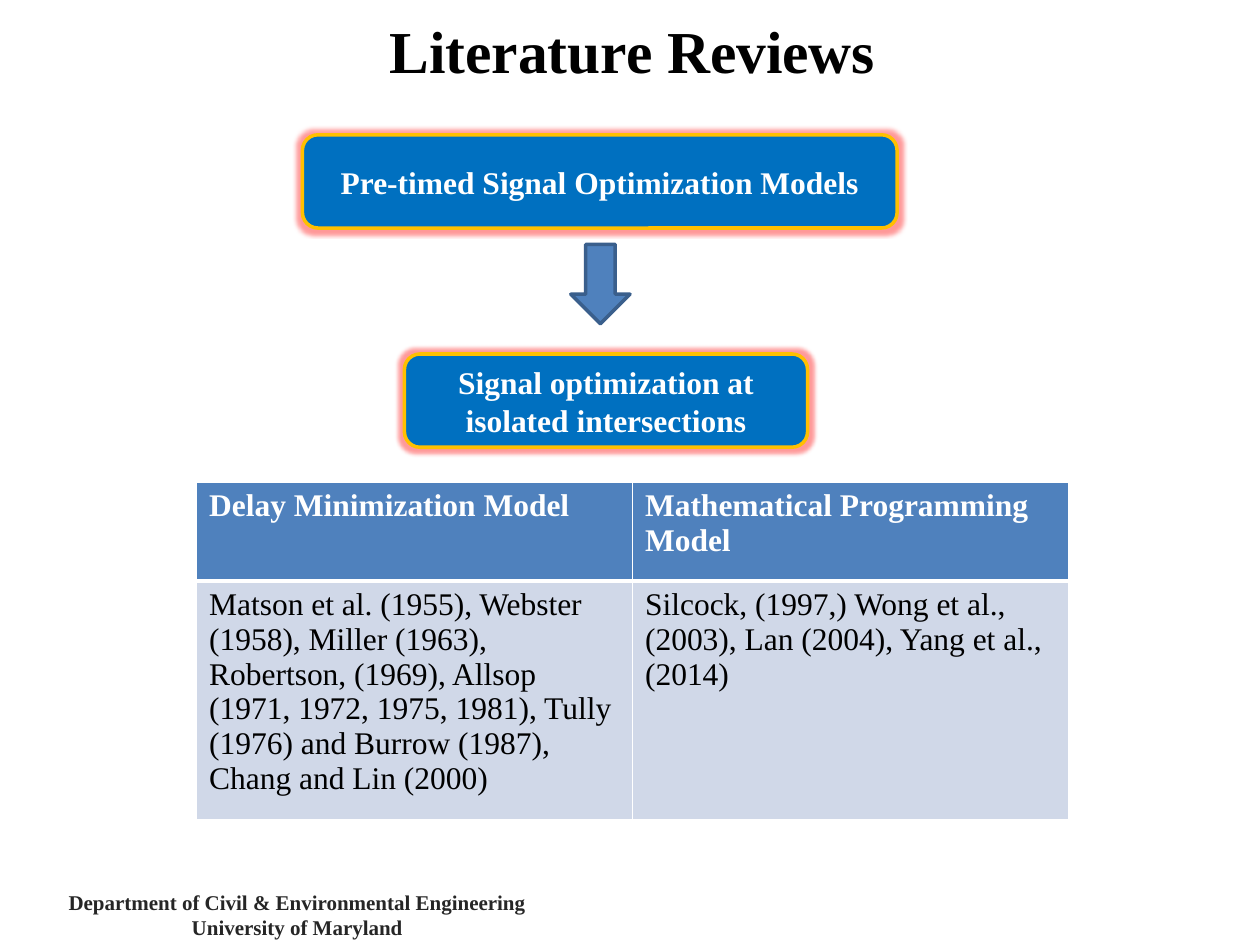
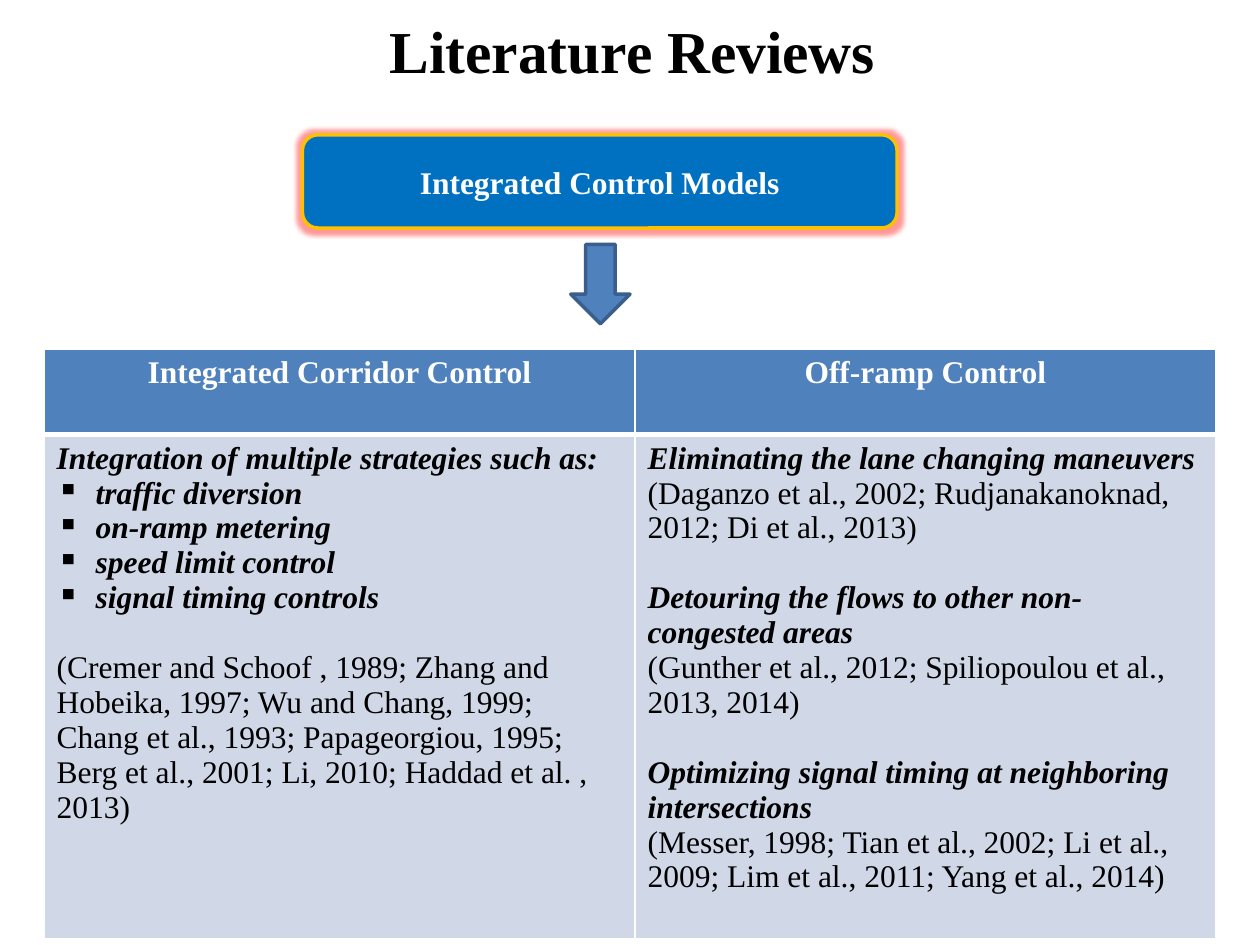
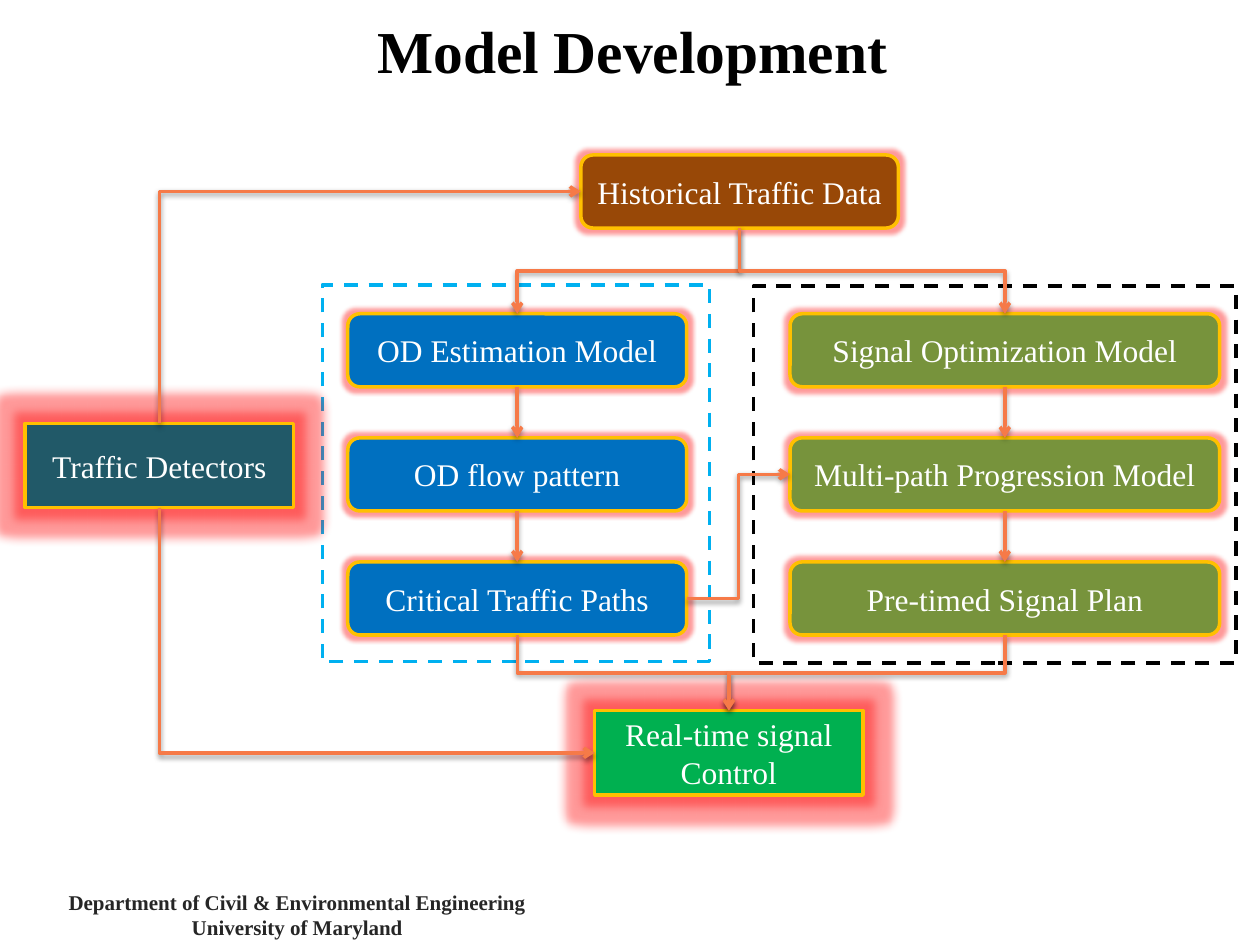
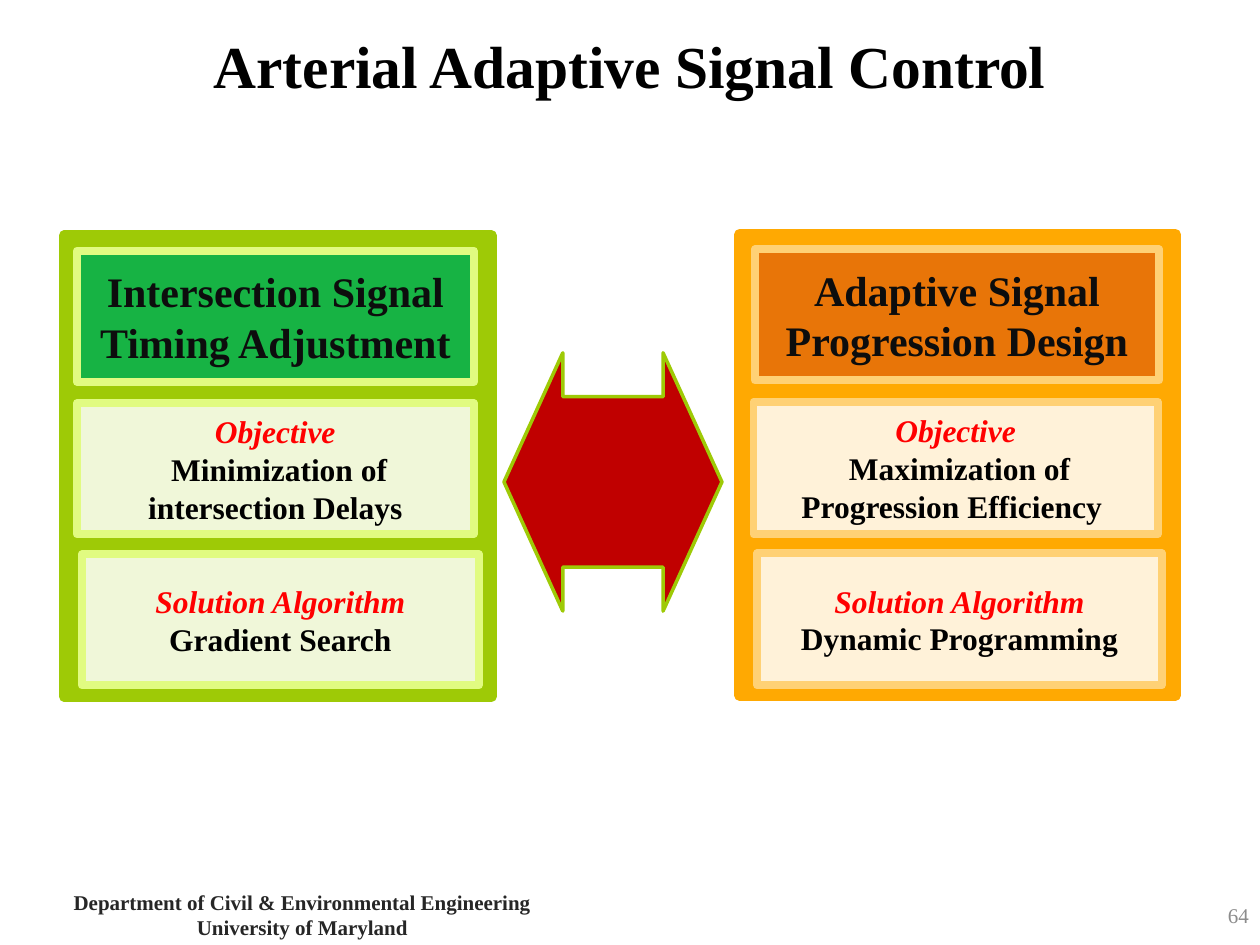
from dataclasses import dataclass, replace
from typing import Any, Optional

import lxml.etree
import pptx
import pptx.dml.color
import pptx.enum.dml
import pptx.enum.shapes
import pptx.enum.text
import pptx.oxml.ns
import pptx.util

Inches = pptx.util.Inches
Pt = pptx.util.Pt
RGB = pptx.dml.color.RGBColor
Kind = pptx.enum.shapes.MSO_SHAPE
Wire = pptx.enum.shapes.MSO_CONNECTOR
Align = pptx.enum.text.PP_ALIGN
Anchor = pptx.enum.text.MSO_ANCHOR
qn = pptx.oxml.ns.qn

FONT = "Times New Roman"
BLACK = RGB(0x00, 0x00, 0x00)
WHITE = RGB(0xFF, 0xFF, 0xFF)
RED = RGB(0xFF, 0x00, 0x00)
INK = RGB(0x0D, 0x0D, 0x0D)
DARK = RGB(0x26, 0x26, 0x26)
GRAY = RGB(0x8C, 0x8C, 0x8C)
BLUE = RGB(0x00, 0x70, 0xC0)
SKY = RGB(0x00, 0xB0, 0xF0)
STEEL = RGB(0x4F, 0x81, 0xBD)
NAVY = RGB(0x3A, 0x5F, 0x8C)
PALE = RGB(0xD0, 0xD8, 0xE8)
GOLD = RGB(0xFF, 0xC0, 0x00)
TEAL = RGB(0x21, 0x59, 0x68)
BROWN = RGB(0x98, 0x48, 0x07)
OLIVE = RGB(0x77, 0x93, 0x3C)
GREEN = RGB(0x00, 0xB0, 0x50)
CORAL = RGB(0xF6, 0x7A, 0x48)
LIME = RGB(0x9E, 0xCA, 0x06)
LEMON = RGB(0xE1, 0xFB, 0x81)
AMBER = RGB(0xFF, 0xA9, 0x02)
SAND = RGB(0xFF, 0xD1, 0x75)
RUST = RGB(0xE4, 0x6C, 0x0A)
WINE = RGB(0xC0, 0x00, 0x00)


@dataclass(frozen=True)
class Para:
    text: str
    size: float = 18
    color: RGB = BLACK
    bold: bool = False
    italic: bool = False
    align: Any = Align.LEFT
    bullet: bool = False
    gap: float = 0


@dataclass(frozen=True)
class Rect:
    left: float
    top: float
    width: float
    height: float

    def frame(self) -> list[int]:
        return [Inches(v) for v in (self.left, self.top, self.width, self.height)]


@dataclass(frozen=True)
class Node:
    text: str
    rect: Rect
    fill: RGB
    bold: bool = False
    kind: Any = Kind.ROUNDED_RECTANGLE
    glow: float = 5


@dataclass(frozen=True)
class Panel:
    rect: Rect
    fill: RGB
    edge: RGB
    head: RGB
    title: str
    goal: str
    method: str
    cards: tuple[Rect, ...]


def sub(parent: Any, tag: str, **attrs: Any) -> Any:
    """Append a child element with the given attributes."""
    return lxml.etree.SubElement(
        parent, qn(tag), {k: str(v) for k, v in attrs.items()})


def tint(parent: Any, color: RGB, alpha: int) -> None:
    """Add a colour with its opacity in percent."""
    sub(sub(parent, "a:srgbClr", val=color), "a:alpha", val=alpha * 1000)


def write(frame: Any, paras: list[Para]) -> None:
    """Fill a text frame with formatted paragraphs."""
    frame.word_wrap = True
    for i, item in enumerate(paras):
        para = frame.paragraphs[0] if i == 0 else frame.add_paragraph()
        para.text = item.text
        para.alignment = item.align
        if item.gap:
            para.space_before = Pt(item.gap)
        if item.bullet:
            props = para._p.get_or_add_pPr()
            props.set("marL", str(Inches(0.31)))
            props.set("indent", str(-Inches(0.31)))
            sub(props, "a:buChar", char="▪")
        font = para.font
        font.name, font.size = FONT, Pt(item.size)
        font.bold, font.italic = item.bold, item.italic
        font.color.rgb = item.color


def add_slide(deck: Any, title: str, rect: Rect = Rect(0.04, 0.06, 9.96, 0.67),
              anchor: Any = Anchor.TOP) -> Any:
    slide = deck.slides.add_slide(deck.slide_layouts[5])
    head = slide.shapes.title
    head.left, head.top, head.width, head.height = rect.frame()
    write(head.text_frame, [Para(title, 34, bold=True, align=Align.CENTER)])
    head.text_frame.vertical_anchor = anchor
    return slide


def add_text(slide: Any, rect: Rect, paras: list[Para]) -> None:
    box = slide.shapes.add_textbox(*rect.frame())
    write(box.text_frame, paras)
    box.text_frame.vertical_anchor = Anchor.MIDDLE


def add_footer(slide: Any, width: float = 3.86) -> None:
    base = Para("", 12, DARK, True, align=Align.CENTER)
    lines = ("Department of Civil & Environmental Engineering",
             "University of Maryland")
    add_text(slide, Rect(0.43, 7.06, width, 0.4),
             [replace(base, text=line) for line in lines])


def add_block(shapes: Any, kind: Any, rect: Rect, fill: Optional[RGB],
              edge: RGB, weight: float = 2, alpha: int = 100) -> Any:
    """Draw a preset shape; no fill when fill is None."""
    shape = shapes.add_shape(kind, *rect.frame())
    shape.shadow.inherit = False
    shape.line.color.rgb = edge
    shape.line.width = Pt(weight)
    if fill is None:
        shape.fill.background()
    else:
        shape.fill.solid()
        shape.fill.fore_color.rgb = fill
        if alpha < 100:
            color = shape._element.spPr.find(qn("a:solidFill"))[0]
            sub(color, "a:alpha", val=alpha * 1000)
    return shape


def add_node(slide: Any, node: Node) -> Any:
    """Draw a glowing labelled box."""
    shape = add_block(slide.shapes, node.kind, node.rect, node.fill, GOLD)
    effects = shape._element.spPr.find(qn("a:effectLst"))
    tint(sub(effects, "a:glow", rad=Pt(node.glow)), RED, 40)
    write(shape.text_frame,
          [Para(node.text, color=WHITE, bold=node.bold, align=Align.CENTER)])
    return shape


def add_dash(slide: Any, rect: Rect, edge: RGB) -> None:
    frame = add_block(slide.shapes, Kind.RECTANGLE, rect, None, edge)
    frame.line.dash_style = pptx.enum.dml.MSO_LINE.DASH


def add_arrow(slide: Any) -> None:
    """Draw the block arrow that points down from the top box."""
    arrow = add_block(slide.shapes, Kind.RIGHT_ARROW,
                      Rect(4.45, 2.02, 0.63, 0.47), STEEL, NAVY)
    arrow.rotation = 90


def add_table(slide: Any, rect: Rect, cols: list[float], rows: list[float],
              cells: list[list[list[Para]]]) -> None:
    table = slide.shapes.add_table(len(rows), len(cols), *rect.frame()).table
    for col, width in zip(table.columns, cols):
        col.width = Inches(width)
    for r, (row, height) in enumerate(zip(table.rows, rows)):
        row.height = Inches(height)
        for c, paras in enumerate(cells[r]):
            cell = table.cell(r, c)
            props = cell._tc.get_or_add_tcPr()
            for side in "LRTB":
                thick = (r, side) in ((0, "B"), (1, "T"))
                line = sub(props, f"a:ln{side}", w=Pt(3 if thick else 1))
                sub(sub(line, "a:solidFill"), "a:srgbClr", val=WHITE)
            cell.fill.solid()
            cell.fill.fore_color.rgb = PALE if r else STEEL
            write(cell.text_frame, paras)


def side(shape: Any, spot: int) -> tuple[int, int]:
    """Middle of a side: 0 top, 1 left, 2 bottom, 3 right."""
    x = shape.left + (shape.width // 2, 0, shape.width // 2, shape.width)[spot]
    y = shape.top + (0, shape.height // 2, shape.height, shape.height // 2)[spot]
    return x, y


def style(wire: Any) -> None:
    """Give a connector its colour, arrowhead and soft shadow."""
    wire.line.color.rgb = CORAL
    wire.line.width = Pt(2)
    props = wire._element.spPr
    sub(props.find(qn("a:ln")), "a:tailEnd", type="arrow")
    shade = sub(sub(props, "a:effectLst"), "a:outerShdw", blurRad=Pt(3.1),
                dist=Pt(1.6), dir=90 * 60000, rotWithShape=0)
    tint(shade, BLACK, 38)


def add_link(slide: Any, start: Any, end: Any) -> None:
    """Join the bottom of one box to the top of the next."""
    wire = slide.shapes.add_connector(Wire.STRAIGHT, *side(start, 2), *side(end, 0))
    wire.begin_connect(start, 2)
    wire.end_connect(end, 0)
    style(wire)


def add_elbow(slide: Any, start: tuple[int, int], end: tuple[int, int],
              bends: int = 2) -> None:
    """Draw an elbow that leaves its start vertically."""
    (x1, y1), (x2, y2) = start, end
    midx, midy = (x1 + x2) // 2, (y1 + y2) // 2
    turn = 270 if x2 > x1 and y2 > y1 else 90
    sign = 1 if turn == 90 else -1
    dx, dy = sign * (y2 - y1) // 2, sign * (x2 - x1) // 2
    wire = slide.shapes.add_connector(
        Wire.ELBOW, midx - dx, midy + dy, midx + dx, midy - dy)
    props = wire._element.spPr
    props.find(qn("a:xfrm")).set("rot", str(turn * 60000))
    props.find(qn("a:prstGeom")).set("prst", f"bentConnector{bends + 1}")
    style(wire)


def add_panel(slide: Any, panel: Panel) -> None:
    """Draw a grouped panel with a heading and two cards."""
    shapes = slide.shapes.add_group_shape().shapes
    add_block(shapes, Kind.RECTANGLE, panel.rect, panel.fill, panel.fill, 6)
    key = Para("", color=RED, bold=True, italic=True, align=Align.CENTER)
    body = replace(key, color=BLACK, italic=False)
    texts = (
        [replace(body, text=panel.title, size=24, color=INK)],
        [replace(key, text="Objective"), replace(body, text=panel.goal)],
        [replace(key, text="Solution Algorithm"), replace(body, text=panel.method)],
    )
    for rect, fill, paras in zip(panel.cards, (panel.head, WHITE, WHITE), texts):
        card = add_block(shapes, Kind.RECTANGLE, rect, fill, panel.edge, 4.5, 85)
        write(card.text_frame, paras)


TOP = Rect(2.4, 1.07, 4.72, 0.74)
HEAD = Para("", color=WHITE, bold=True)
NOTE = Para("", bold=True, italic=True)


def draw_timed(deck: Any) -> None:
    slide = add_slide(deck, "Literature Reviews")
    add_node(slide, Node("Pre-timed Signal Optimization Models", TOP, BLUE, True))
    add_arrow(slide)
    add_node(slide, Node("Signal optimization at isolated intersections",
                         Rect(3.21, 2.81, 3.2, 0.74), BLUE, True))
    add_table(slide, Rect(1.56, 3.83, 6.92, 2.68), [3.46, 3.46], [0.78, 1.9], [
        [[replace(HEAD, text="Delay Minimization Model")],
         [replace(HEAD, text="Mathematical Programming Model")]],
        [[Para("Matson et al. (1955), Webster (1958), Miller (1963), Robertson, "
               "(1969), Allsop (1971, 1972, 1975, 1981), Tully (1976) and Burrow "
               "(1987), Chang and Lin (2000)")],
         [Para("Silcock, (1997,) Wong et al., (2003), Lan (2004), "
               "Yang et al., (2014)")]],
    ])
    add_footer(slide)


def draw_joint(deck: Any) -> None:
    slide = add_slide(deck, "Literature Reviews")
    add_node(slide, Node("Integrated Control Models", TOP, BLUE, True))
    add_arrow(slide)
    head = replace(HEAD, align=Align.CENTER)
    plans = ("traffic diversion", "on-ramp metering", "speed limit control",
             "signal timing controls")
    left = [replace(NOTE, text="Integration of multiple strategies such as:")]
    left += [replace(NOTE, text=plan, bullet=True) for plan in plans]
    left.append(Para(
        "(Cremer and Schoof , 1989; Zhang and Hobeika, 1997; Wu and Chang, 1999; "
        "Chang et al., 1993; Papageorgiou, 1995; Berg et al., 2001; Li, 2010; "
        "Haddad et al. , 2013)", gap=20))
    works = (
        ("Eliminating the lane changing maneuvers",
         "(Daganzo et al., 2002; Rudjanakanoknad, 2012; Di et al., 2013)"),
        ("Detouring the flows to other non-congested areas",
         "(Gunther et al., 2012; Spiliopoulou et al., 2013, 2014)"),
        ("Optimizing signal timing at neighboring intersections",
         "(Messer, 1998; Tian et al., 2002; Li et al., 2009; Lim et al., 2011; "
         "Yang et al., 2014)"),
    )
    right = []
    for topic, cites in works:
        right += [replace(NOTE, text=topic, gap=20 if right else 0), Para(cites)]
    add_table(slide, Rect(0.35, 2.77, 9.3, 4.68), [4.69, 4.61], [0.68, 4], [
        [[replace(head, text="Integrated Corridor Control")],
         [replace(head, text="Off-ramp Control")]],
        [left, right],
    ])


def draw_model(deck: Any) -> None:
    slide = add_slide(deck, "Model Development")
    add_dash(slide, Rect(2.56, 2.26, 3.07, 2.99), SKY)
    add_dash(slide, Rect(5.98, 2.27, 3.83, 2.99), BLACK)
    source = add_node(slide, Node("Traffic Detectors", Rect(0.2, 3.36, 2.13, 0.67),
                                  TEAL, kind=Kind.RECTANGLE, glow=11))
    past = add_node(slide, Node("Historical Traffic Data",
                                Rect(4.61, 1.23, 2.52, 0.58), BROWN))
    live = add_node(slide, Node("Real-time signal Control",
                                Rect(4.72, 5.64, 2.13, 0.67), GREEN,
                                kind=Kind.RECTANGLE, glow=11))
    chains = (
        (2.76, 2.69, BLUE,
         ("OD Estimation Model", "OD flow pattern", "Critical Traffic Paths")),
        (6.27, 3.41, OLIVE,
         ("Signal Optimization Model", "Multi-path Progression Model",
          "Pre-timed Signal Plan")),
    )
    drawn = []
    for left, width, fill, names in chains:
        boxes = [add_node(slide, Node(name, Rect(left, 2.49 + 0.985 * i, width, 0.58),
                                      fill))
                 for i, name in enumerate(names)]
        for start, end in zip(boxes, boxes[1:]):
            add_link(slide, start, end)
        add_elbow(slide, side(past, 2), side(boxes[0], 0))
        add_elbow(slide, side(boxes[-1], 2), side(live, 0))
        drawn.append(boxes)
    flow, signal = drawn
    add_elbow(slide, side(source, 0), side(past, 1), 1)
    add_elbow(slide, side(source, 2), side(live, 1), 1)
    style(slide.shapes.add_connector(Wire.ELBOW, *side(flow[2], 3),
                                     *side(signal[1], 1)))
    add_footer(slide)


def draw_control(deck: Any) -> None:
    slide = add_slide(deck, "Arterial Adaptive Signal Control",
                      Rect(0.5, -0.11, 9, 1.25), Anchor.MIDDLE)
    panels = (
        Panel(Rect(0.51, 1.87, 3.39, 3.66), LIME, LEMON, GREEN,
              "Intersection Signal Timing Adjustment",
              " Minimization of intersection Delays", "Gradient Search",
              (Rect(0.61, 1.99, 3.15, 1.04), Rect(0.61, 3.2, 3.15, 1.04),
               Rect(0.65, 4.4, 3.15, 1.04))),
        Panel(Rect(5.87, 1.86, 3.46, 3.66), AMBER, SAND, RUST,
              "Adaptive Signal Progression Design",
              " Maximization of Progression Efficiency ", "Dynamic Programming",
              (Rect(5.99, 1.98, 3.21, 1.04), Rect(5.98, 3.19, 3.21, 1.05),
               Rect(6.01, 4.39, 3.21, 1.05))),
    )
    for panel in panels:
        add_panel(slide, panel)
    arrow = add_block(slide.shapes, Kind.LEFT_RIGHT_ARROW,
                      Rect(4, 2.8, 1.73, 2.05), WINE, LIME)
    arrow.adjustments[0] = 0.66
    arrow.adjustments[1] = 0.27
    add_footer(slide, 3.94)
    add_text(slide, Rect(7.68, 7.06, 2.33, 0.4),
             [Para("64", 12, GRAY, align=Align.RIGHT)])


def main() -> None:
    deck = pptx.Presentation()
    deck.slide_width, deck.slide_height = Inches(10), Inches(7.5)
    for draw in (draw_timed, draw_joint, draw_model, draw_control):
        draw(deck)
    deck.save("out.pptx")


if __name__ == "__main__":
    main()
